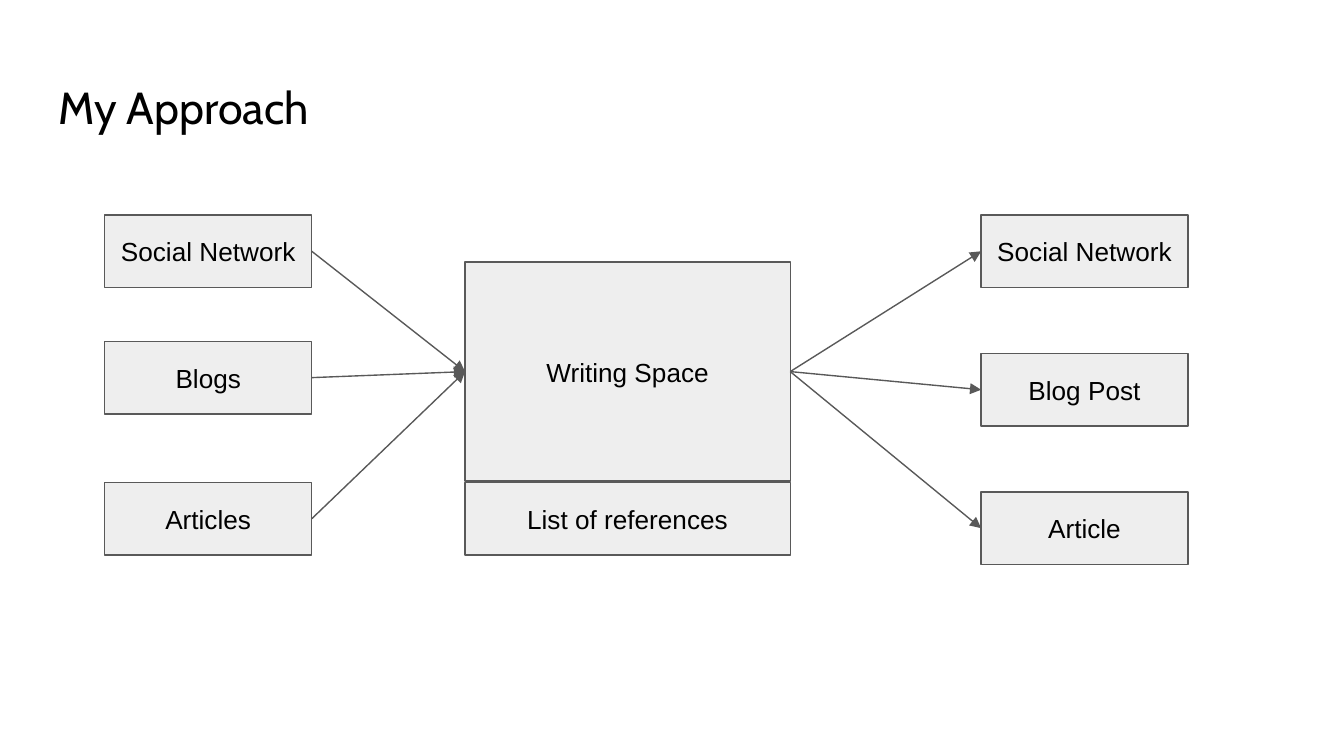
import pptx
import pptx.util
import pptx.dml.color
import pptx.enum.shapes
import pptx.enum.text
import pptx.oxml.ns
from lxml import etree

Inches = pptx.util.Inches
Pt = pptx.util.Pt
RGB = pptx.dml.color.RGBColor.from_string
COLORS = {"text": "000000", "box": "EEEEEE", "line": "595959"}
MARGINS = {f"margin_{side}": Inches(0.1) for side in ("left", "top", "right", "bottom")}
LEFT, RIGHT = 1, 3

deck = pptx.Presentation()
deck.slide_width = Inches(10)
deck.slide_height = deck.slide_width * 9 // 16
slide = deck.slides.add_slide(deck.slide_layouts[6])


def write(shape, text, font, size, **frame_format):
    frame = shape.text_frame
    for name, value in {"word_wrap": True, **MARGINS, **frame_format}.items():
        setattr(frame, name, value)
    run = frame.paragraphs[0].add_run()
    run.text = text
    run.font.name, run.font.size = font, Pt(size)
    run.font.color.rgb = RGB(COLORS["text"])


def add_box(text, left, top, width=1.54, height=0.54):
    box = slide.shapes.add_shape(
        pptx.enum.shapes.MSO_SHAPE.RECTANGLE,
        Inches(left), Inches(top), Inches(width), Inches(height))
    box.shadow.inherit = False
    box.fill.solid()
    box.fill.fore_color.rgb = RGB(COLORS["box"])
    box.line.color.rgb = RGB(COLORS["line"])
    box.line.width = Pt(0.75)
    write(box, text, "Arial", 14, vertical_anchor=pptx.enum.text.MSO_ANCHOR.MIDDLE)
    box.text_frame.paragraphs[0].alignment = pptx.enum.text.PP_ALIGN.CENTER
    return box


title = slide.shapes.add_textbox(Inches(0.34), Inches(0.49), Inches(9.32), Inches(0.63))
write(title, "My Approach", "Cabin", 24)

sources = [add_box(text, 0.78, top) for text, top in
           [("Social Network", 1.6), ("Blogs", 2.54), ("Articles", 3.59)]]
writing_space = add_box("Writing Space", 3.46, 1.95, 2.42, 1.63)
outputs = [add_box(text, 7.3, 1.6 + 1.03 * row)
           for row, text in enumerate(["Social Network", "Blog Post", "Article"])]
add_box("List of references", 3.46, 3.59, 2.42)

flows = [(source, writing_space) for source in sources]
flows += [(writing_space, output) for output in outputs]
for start, end in flows:
    arrow = slide.shapes.add_connector(
        pptx.enum.shapes.MSO_CONNECTOR.STRAIGHT, 0, 0, 0, 0)
    arrow.begin_connect(start, RIGHT)
    arrow.end_connect(end, LEFT)
    arrow.line.color.rgb = RGB(COLORS["line"])
    arrow.line.width = Pt(0.75)
    etree.SubElement(arrow.line._get_or_add_ln(),
                     pptx.oxml.ns.qn("a:tailEnd"), type="triangle")
    etree.SubElement(arrow._element.spPr, pptx.oxml.ns.qn("a:effectLst"))

deck.save("out.pptx")
